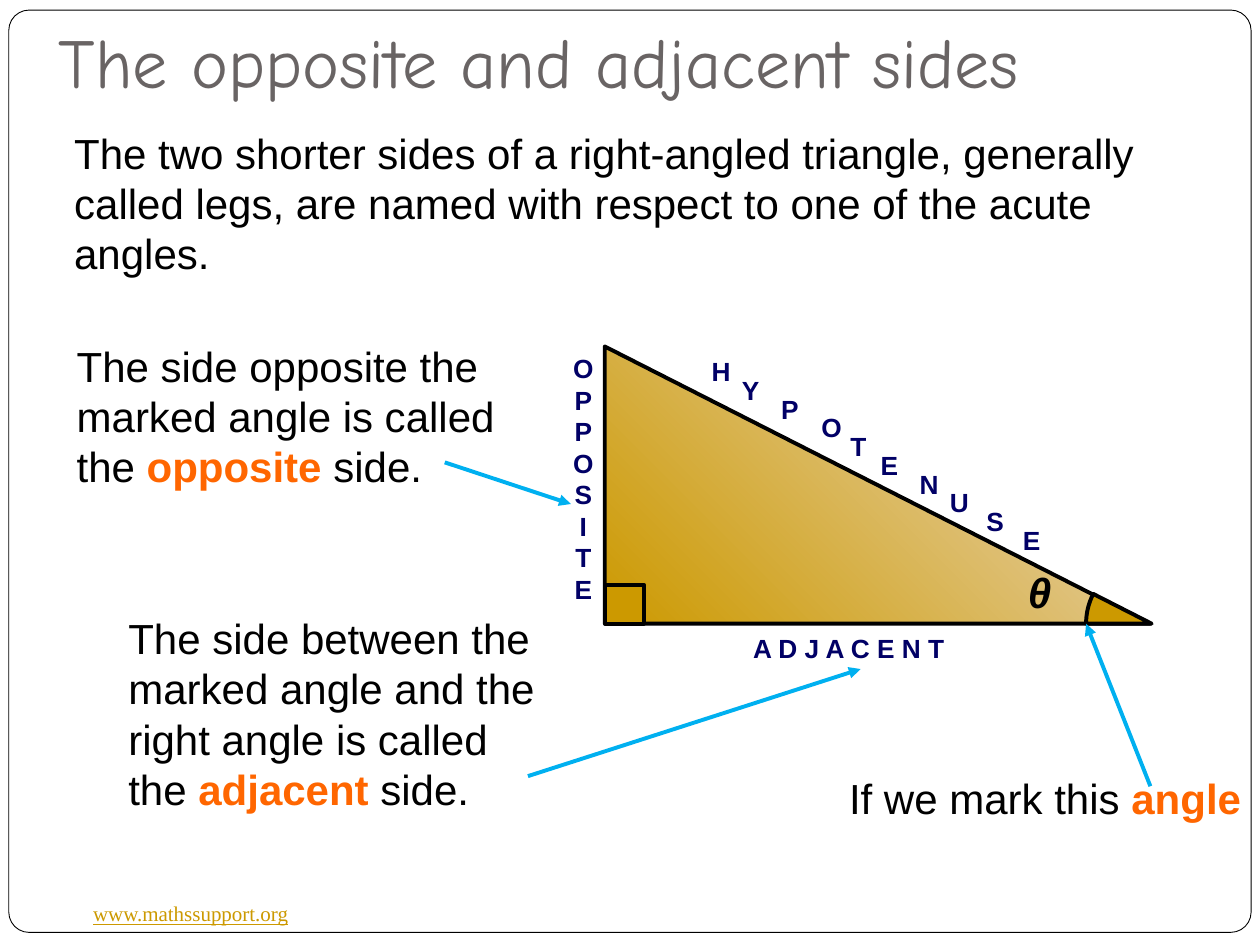
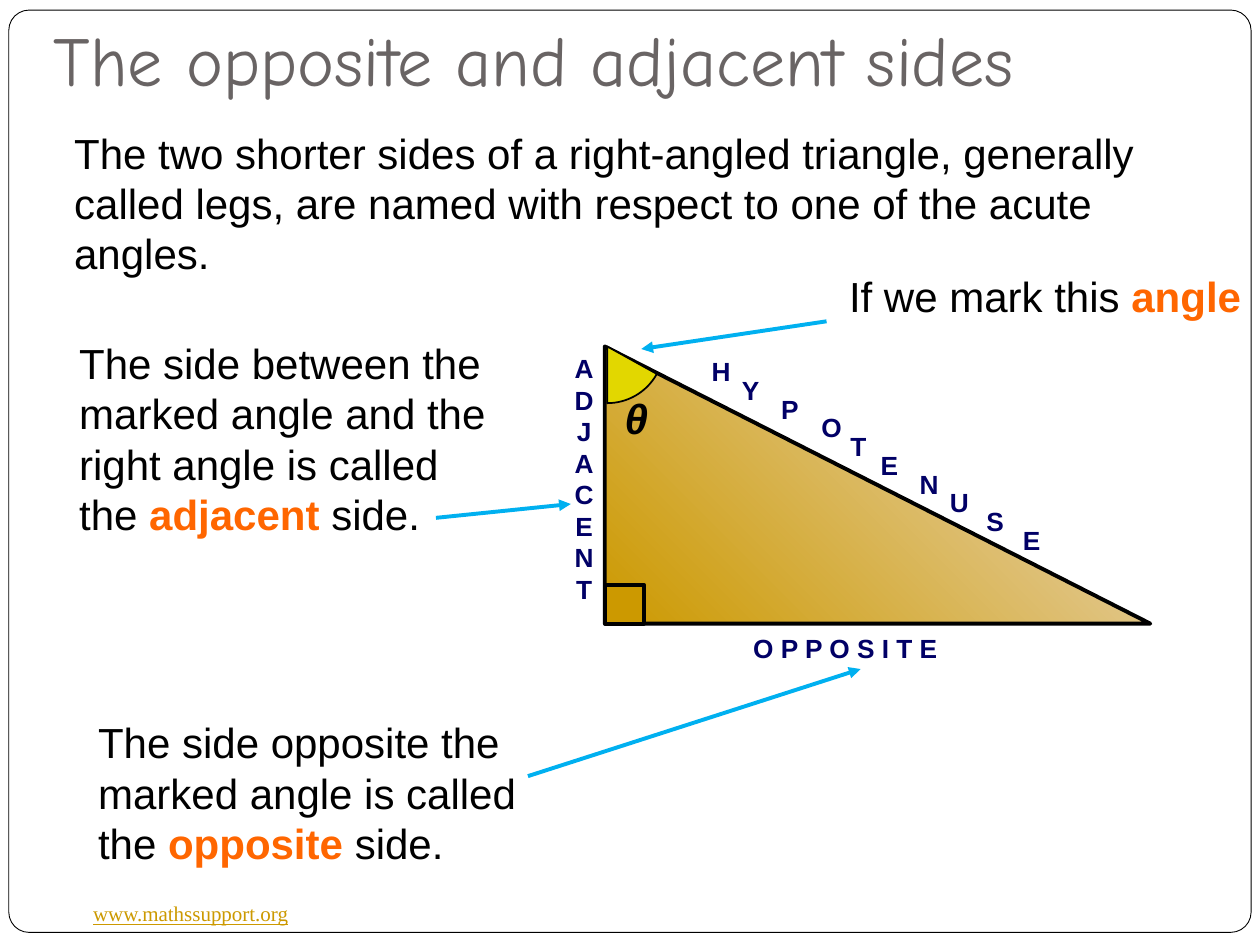
from dataclasses import dataclass

from lxml import etree
from pptx import Presentation
from pptx import util as u
from pptx.dml.color import RGBColor
from pptx.enum import shapes, text
from pptx.oxml import ns


@dataclass(frozen=True)
class Theme:
    paper: str = "FFFFFF"
    ink: str = "000000"
    title: str = "696464"
    gold: str = "CC9900"
    pale_gold: str = "EADAC6"
    yellow: str = "E2D700"
    highlight: str = "FF6600"
    side_name: str = "010066"
    arrow: str = "00B0F0"
    body_font: str = "Arial"
    title_font: str = "Comic Neue"
    footer_font: str = "Times New Roman"
    title_size: int = 40
    body_size: int = 24
    label_size: int = 15
    footer_size: int = 12
    thick: float = 2.25


THEME = Theme()

TITLE = "The opposite and adjacent sides"
INTRO = ("The two shorter sides of a right-angled triangle, generally called legs, "
         "are named with respect to one of the acute angles.")
FOOTER = "www.mathssupport.org"
# Text between asterisks is highlighted.
OPPOSITE = "The side opposite the marked angle is called the *opposite* side."
ADJACENT = ("The side between the marked angle and the right angle is called the "
            "*adjacent* side.")
MARKED_ANGLE = "If we mark this *angle*"

HYPOTENUSE = "HYPOTENUSE"
HYPOTENUSE_LEFTS = (5.55, 5.79, 6.10, 6.42, 6.65, 6.89, 7.20, 7.44, 7.73, 8.02)
HYPOTENUSE_TOP, HYPOTENUSE_STEP = 2.77, 0.149

TRIANGLE = (4.80, 2.75, 4.33, 2.20)
RIGHT_ANGLE_SIZE = 0.31
BASE_ARROW = ((4.19, 6.16), (6.83, 5.31))

SLIDES = [
    {
        "title_at": (0.37, 0.15, 9.37, 0.76),
        "explanations": [(OPPOSITE, (0.51, 2.65, 3.69, 1.31)),
                         (ADJACENT, (0.92, 4.81, 3.58, 1.72))],
        "upright": ("OPPOSITE", (4.45, 2.75, 0.36, 2.10)),
        "base": ("ADJACENT", (5.88, 4.97, 1.74, 0.35)),
        "theta_at": (8.06, 4.45, 0.38, 0.50),
        "prompt_at": (6.64, 6.08, 3.36, 0.50),
        "angle": {"centre": (9.14, 4.95), "radius": 0.52, "start": 180, "end": 207,
                  "fill": THEME.gold, "width": THEME.thick},
        "arrows": [((3.53, 3.67), (4.53, 4.00)), BASE_ARROW,
                   ((9.13, 6.24), (8.62, 4.95))],
    },
    {
        "title_at": (0.33, 0.14, 9.37, 0.76),
        "explanations": [(OPPOSITE, (0.68, 5.64, 3.69, 1.31)),
                         (ADJACENT, (0.53, 2.63, 3.58, 1.72))],
        "upright": ("ADJACENT", (4.44, 2.75, 0.39, 2.12)),
        "base": ("OPPOSITE", (5.88, 4.97, 1.67, 0.35)),
        "theta_at": (4.86, 3.07, 0.38, 0.50),
        "prompt_at": (6.64, 2.10, 3.36, 0.50),
        "angle": {"centre": (4.82, 2.75), "radius": 0.45, "start": 29, "end": 90,
                  "fill": THEME.yellow, "width": 1},
        "arrows": [((3.46, 4.11), (4.53, 4.00)), BASE_ARROW,
                   ((6.56, 2.55), (5.09, 2.77))],
    },
]


def color(value):
    return RGBColor.from_string(value)


def inches(values):
    return [u.Inches(value) for value in values]


def add_text(slide, content, at, *, size=THEME.body_size, font=THEME.body_font,
             ink=THEME.ink, bold=False, italic=False, underline=False, wrap=True,
             align=text.PP_ALIGN.LEFT, anchor=text.MSO_ANCHOR.TOP,
             bottom=0.05, grow=True, fill=None):
    """Add a text box; newlines part paragraphs, asterisks enclose highlights."""
    box = slide.shapes.add_textbox(*inches(at))
    if fill:
        box.fill.solid()
        box.fill.fore_color.rgb = color(fill)
    frame = box.text_frame
    frame.word_wrap = wrap
    frame.auto_size = (text.MSO_AUTO_SIZE.SHAPE_TO_FIT_TEXT if grow
                       else text.MSO_AUTO_SIZE.NONE)
    frame.vertical_anchor = anchor
    frame.margin_bottom = u.Inches(bottom)
    for index, line in enumerate(content.split("\n")):
        paragraph = frame.add_paragraph() if index else frame.paragraphs[0]
        paragraph.alignment = align
        for part, words in enumerate(line.split("*")):
            if not words:
                continue
            highlighted = part % 2 == 1
            run = paragraph.add_run()
            run.text = words
            run.font.name = font
            run.font.size = u.Pt(size)
            run.font.bold = bold or highlighted
            run.font.italic = italic
            run.font.underline = underline
            run.font.color.rgb = color(THEME.highlight if highlighted else ink)


def add_outlined(slide, kind, at, fill=None, width=THEME.thick):
    shape = slide.shapes.add_shape(kind, *inches(at))
    shape.shadow.inherit = False
    if fill:
        shape.fill.solid()
        shape.fill.fore_color.rgb = color(fill)
    shape.line.color.rgb = color(THEME.ink)
    shape.line.width = u.Pt(width)
    return shape


def add_arrow(slide, start, end):
    arrow = slide.shapes.add_connector(shapes.MSO_CONNECTOR.STRAIGHT,
                                       *inches(start + end))
    arrow.line.color.rgb = color(THEME.arrow)
    arrow.line.width = u.Pt(THEME.thick)
    etree.SubElement(arrow.line._get_or_add_ln(), ns.qn("a:tailEnd"), type="triangle")
    etree.SubElement(arrow._element.spPr, ns.qn("a:effectLst"))


def add_frame(slide, title_at):
    """Add what every slide shares: border, footer, title and introduction."""
    border = add_outlined(slide, shapes.MSO_SHAPE.ROUNDED_RECTANGLE,
                          (0.07, 0.08, 9.86, 7.32), THEME.paper, 0.5)
    border.adjustments[0] = 0.022
    add_text(slide, FOOTER, (0.64, 7.10, 1.77, 0.30), size=THEME.footer_size,
             font=THEME.footer_font, ink=THEME.gold, underline=True, wrap=False)
    add_text(slide, TITLE, title_at, size=THEME.title_size, font=THEME.title_font,
             ink=THEME.title, anchor=text.MSO_ANCHOR.BOTTOM, bottom=0.1, grow=False)
    add_text(slide, INTRO, (0.49, 0.96, 9.18, 1.31))


def add_triangle(slide):
    triangle = add_outlined(slide, shapes.MSO_SHAPE.RIGHT_TRIANGLE, TRIANGLE)
    triangle.fill.gradient()
    triangle.fill.gradient_angle = 45
    for stop, value in zip(triangle.fill.gradient_stops, (THEME.gold, THEME.pale_gold)):
        stop.color.rgb = color(value)
    left, top, _, height = TRIANGLE
    add_outlined(slide, shapes.MSO_SHAPE.RECTANGLE,
                 (left, top + height - RIGHT_ANGLE_SIZE,
                  RIGHT_ANGLE_SIZE, RIGHT_ANGLE_SIZE), THEME.gold)


def add_angle_mark(slide, centre, radius, start, end, fill, width):
    """Add a sector that runs clockwise from start to end, in degrees."""
    x, y = centre
    sector = add_outlined(slide, shapes.MSO_SHAPE.PIE,
                          (x - radius, y - radius, 2 * radius, 2 * radius), fill, width)
    for index, degrees in enumerate((start, end)):
        sector.adjustments[index] = degrees * 0.6


def add_side_names(slide, upright, base):
    style = {"size": THEME.label_size, "ink": THEME.side_name, "bold": True,
             "wrap": False}
    for index, (letter, left) in enumerate(zip(HYPOTENUSE, HYPOTENUSE_LEFTS)):
        top = HYPOTENUSE_TOP + index * HYPOTENUSE_STEP
        add_text(slide, letter, (left, top, 0.35, 0.35), **style)
    name, at = upright
    add_text(slide, "\n".join(name), at, align=text.PP_ALIGN.CENTER, **style)
    name, at = base
    add_text(slide, " ".join(name), at, **style)


def build_slide(presentation, content):
    slide = presentation.slides.add_slide(presentation.slide_layouts[6])
    add_frame(slide, content["title_at"])
    for words, at in content["explanations"]:
        add_text(slide, words, at, fill=THEME.paper)
    add_triangle(slide)
    add_angle_mark(slide, **content["angle"])
    add_text(slide, "θ", content["theta_at"], bold=True, italic=True, wrap=False)
    add_side_names(slide, content["upright"], content["base"])
    add_text(slide, MARKED_ANGLE, content["prompt_at"])
    for start, end in content["arrows"]:
        add_arrow(slide, start, end)


def main():
    presentation = Presentation()
    presentation.slide_width = u.Inches(10)
    presentation.slide_height = u.Inches(7.5)
    for content in SLIDES:
        build_slide(presentation, content)
    presentation.save("out.pptx")


if __name__ == "__main__":
    main()
